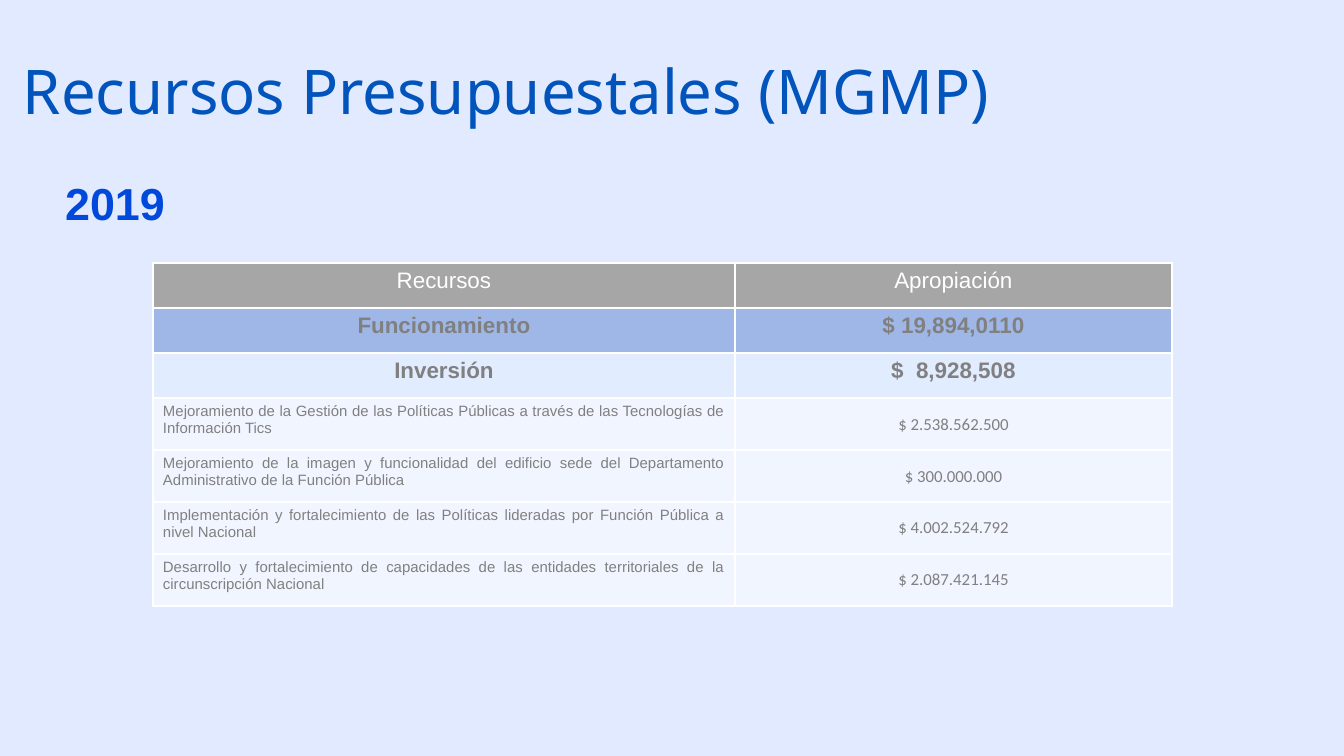
import pptx
import pptx.util
import pptx.dml.color
import pptx.enum.text
import pptx.oxml.ns
import lxml.etree

RGB = pptx.dml.color.RGBColor
ALIGN = pptx.enum.text.PP_ALIGN
ANCHOR = pptx.enum.text.MSO_ANCHOR

SKY = RGB(0xE2, 0xEA, 0xFF)
NAVY = RGB(0x00, 0x54, 0xBC)
BLUE = RGB(0x00, 0x49, 0xDB)
WHITE = RGB(0xFF, 0xFF, 0xFF)
GRAY = RGB(0x80, 0x80, 0x80)
SILVER = RGB(0xA6, 0xA6, 0xA6)
STEEL = RGB(0x9F, 0xB7, 0xE7)
PALE = RGB(0xE2, 0xEC, 0xFF)
MIST = RGB(0xF1, 0xF5, 0xFF)

SCALE = 914400 / 134.4  # EMU in one px


def px(n):
    return pptx.util.Emu(round(n * SCALE))


def write(frame, text, font, size, color, bold=False, align=ALIGN.LEFT):
    frame.word_wrap = True
    line = frame.paragraphs[0]
    line.text = text
    line.alignment = align
    face = line.runs[0].font
    face.name = font
    face.size = pptx.util.Pt(size)
    face.bold = bold
    face.color.rgb = color


deck = pptx.Presentation()
deck.slide_width, deck.slide_height = px(1344), px(756)
slide = deck.slides.add_slide(deck.slide_layouts[6])
slide.background.fill.solid()
slide.background.fill.fore_color.rgb = SKY

# Title
title = slide.shapes.add_textbox(px(13), px(22), px(1159), px(146)).text_frame
write(title, "Recursos Presupuestales (MGMP)", "Noto Sans", 33, NAVY)
title.vertical_anchor = ANCHOR.MIDDLE
title.margin_left = title.margin_right = px(10)
title.margin_top = title.margin_bottom = px(5)
title.paragraphs[0].line_spacing = 0.9

# Budget table: label, amount, fill
heads = [
    ("Recursos", "Apropiación", SILVER),
    ("Funcionamiento", "$ 19,894,0110", STEEL),
    ("Inversión", "$  8,928,508", PALE),
]
items = [
    ("Mejoramiento de la Gestión de las Políticas Públicas a través de las "
     "Tecnologías de Información Tics", "$ 2.538.562.500", MIST),
    ("Mejoramiento de la imagen y funcionalidad del edificio sede del "
     "Departamento Administrativo de la Función Pública", "$ 300.000.000", MIST),
    ("Implementación y fortalecimiento de las Políticas lideradas por "
     "Función Pública a nivel Nacional", "$ 4.002.524.792", MIST),
    ("Desarrollo y fortalecimiento de capacidades de las entidades "
     "territoriales de la circunscripción Nacional", "$ 2.087.421.145", MIST),
]
rows = heads + items
table = slide.shapes.add_table(len(rows), 2, px(153), px(263), px(1019), px(343)).table
table.columns[0].width = px(582)
table.columns[1].width = px(437)

for r, (label, amount, fill) in enumerate(rows):
    item = r >= len(heads)
    table.rows[r].height = px(52 if item else 45)
    for c, text in enumerate((label, amount)):
        cell = table.cell(r, c)
        if item and c == 0:
            write(cell.text_frame, text, "Arial", 8, GRAY, align=ALIGN.JUSTIFY)
        elif item:
            write(cell.text_frame, text, "Calibri", 9, GRAY, align=ALIGN.CENTER)
        else:
            write(cell.text_frame, text, "Arial", 12, GRAY if r else WHITE,
                  r > 0, ALIGN.CENTER)

        # Tight margins around the item amounts
        tight = item and c == 1
        cell.vertical_anchor = ANCHOR.MIDDLE if tight else ANCHOR.TOP
        cell.margin_left = cell.margin_right = px(1 if tight else 10)
        cell.margin_top = px(1 if tight else 5)
        cell.margin_bottom = px(0 if tight else 5)

        # White borders, then the fill
        props = cell._tc.get_or_add_tcPr()
        for side in ("a:lnL", "a:lnR", "a:lnT", "a:lnB"):
            edge = lxml.etree.SubElement(props, pptx.oxml.ns.qn(side), w="12700")
            paint = lxml.etree.SubElement(edge, pptx.oxml.ns.qn("a:solidFill"))
            lxml.etree.SubElement(paint, pptx.oxml.ns.qn("a:srgbClr"), val=str(WHITE))
        cell.fill.solid()
        cell.fill.fore_color.rgb = fill

# Year
year = slide.shapes.add_textbox(px(52), px(169), px(169), px(67)).text_frame
write(year, "2019", "Arial", 24, BLUE, True)
year.auto_size = pptx.enum.text.MSO_AUTO_SIZE.SHAPE_TO_FIT_TEXT

deck.save("out.pptx")
